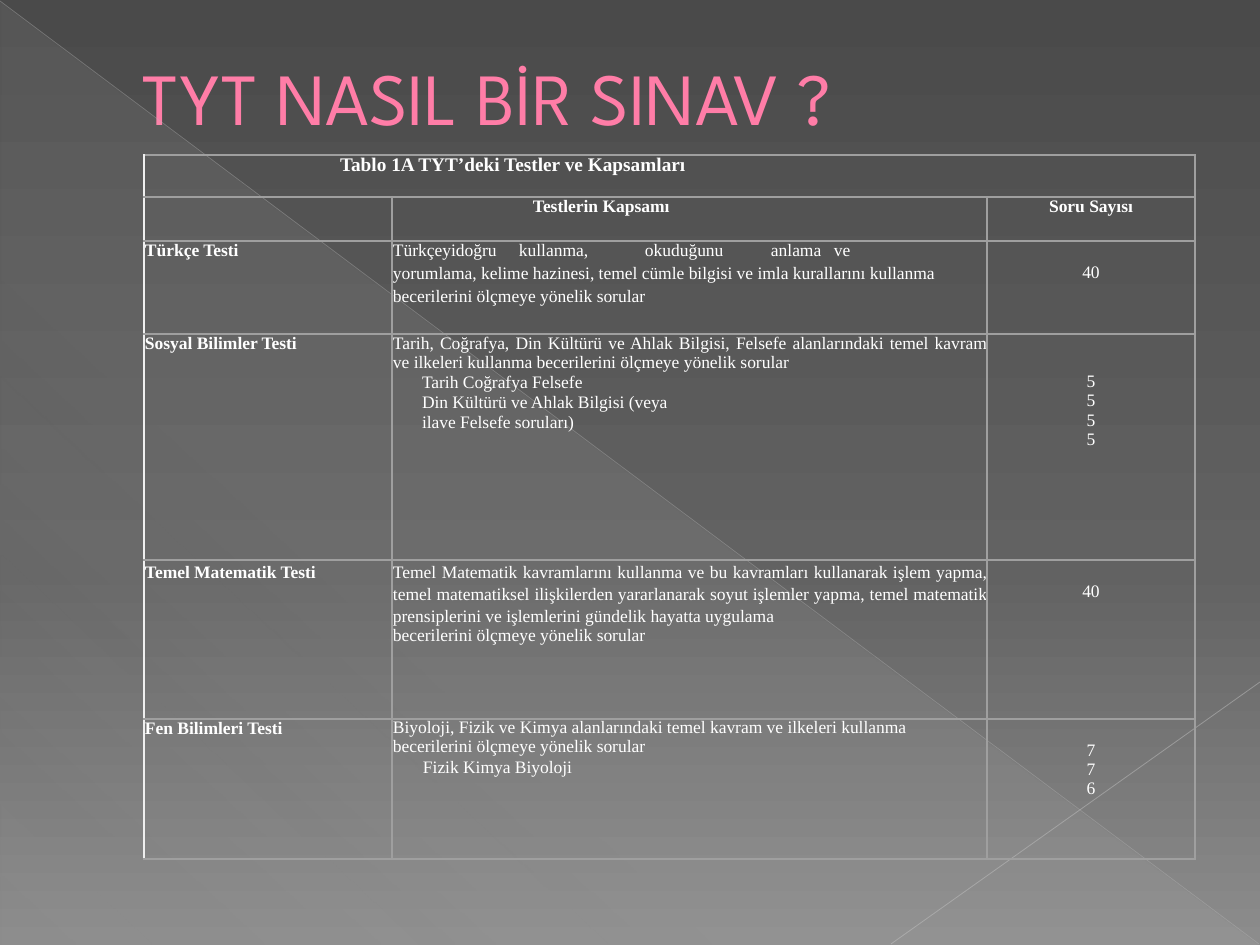
from lxml.etree import SubElement
from pptx import Presentation
from pptx.dml.color import RGBColor
from pptx.enum.shapes import MSO_CONNECTOR, MSO_SHAPE
from pptx.enum.text import MSO_ANCHOR, MSO_AUTO_SIZE, PP_ALIGN
from pptx.oxml.ns import qn
from pptx.util import Pt

EMU_PER_PX = 914400 / 126
SLIDE_BOX = (0, 0, 1260, 945)
TITLE_BOX = (63, 37, 1134, 118)
TABLE_ORIGIN = (144, 155)
COLUMN_WIDTHS = (248, 595, 208)
ROW_HEIGHTS = (42, 44, 93, 226, 159, 140)

WHITE = RGBColor(0xFF, 0xFF, 0xFF)
PINK = RGBColor(0xFF, 0x7D, 0xA7)
GRID = RGBColor(0x9F, 0x9F, 0x9F)
LEFT_EDGE = RGBColor(0xEF, 0xEF, 0xEF)
SHINE = RGBColor(0xD2, 0xD2, 0xD2)
LONG_DIAGONAL = RGBColor(0xBF, 0xBF, 0xBF)
SHORT_DIAGONAL = RGBColor(0xC6, 0xC6, 0xC6)
BACKGROUND_STOPS = (
    (0, RGBColor(0x4A, 0x4A, 0x4A), 100),
    (60, RGBColor(0x62, 0x62, 0x62), 100),
    (100, RGBColor(0x8C, 0x8C, 0x8C), 100),
)
SHINE_STOPS = ((0, SHINE, 10), (70, SHINE, 8), (100, SHINE, 1))

TITLE_FONT = {"name": "League Spartan", "size": Pt(42), "bold": False}
BODY_FONT = {"name": "Times New Roman", "size": Pt(10), "bold": False}
BOLD_FONT = {**BODY_FONT, "bold": True}
CAPTION_FONT = {**BOLD_FONT, "size": Pt(11)}

CENTER = {"alignment": PP_ALIGN.CENTER}
JUSTIFY = {"alignment": PP_ALIGN.JUSTIFY}
LOOSE = {"line_spacing": 1.15}
LIST_LINE = {"line_spacing": Pt(11.5)}


def px(length):
    return round(length * EMU_PER_PX)


def set_all(target, values):
    for name, value in values.items():
        setattr(target, name, value)


def line(text, spacing=None, font=BODY_FONT, left=0, right=0, tabs=()):
    """Describe one paragraph of a cell; indents and tabs are in px."""
    return {"text": text, "spacing": spacing or {}, "font": font,
            "left": left, "right": right, "tabs": tabs}


def cell(*lines, top=0):
    return {"lines": lines, "top": top}


def scores(*values, top):
    return cell(*(line(value, CENTER) for value in values), top=top)


ROWS = (
    (cell(line("Tablo 1A TYT’deki Testler ve Kapsamları",
               {"line_spacing": Pt(12.1)}, CAPTION_FONT, left=196)),
     cell(), cell()),
    (cell(),
     cell(line("Testlerin Kapsamı", font=BOLD_FONT, left=141)),
     cell(line("Soru Sayısı", CENTER, BOLD_FONT))),
    (cell(line("Türkçe Testi", font=BOLD_FONT, left=1)),
     cell(line("Türkçeyi\tdoğru\tkullanma,\tokuduğunu\tanlama\tve",
               {"line_spacing": Pt(11.2)}, left=1, tabs=(83, 144, 233, 331, 402)),
          line("yorumlama, kelime hazinesi, temel cümle bilgisi ve imla kurallarını "
               "kullanma becerilerini ölçmeye yönelik sorular",
               {"line_spacing": Pt(13)}, left=1)),
     scores("40", top=22)),
    (cell(line("Sosyal Bilimler Testi", font=BOLD_FONT, left=1)),
     cell(line("Tarih, Coğrafya, Din Kültürü ve Ahlak Bilgisi, Felsefe alanlarındaki "
               "temel kavram ve ilkeleri kullanma becerilerini ölçmeye yönelik sorular",
               JUSTIFY, left=1),
          line("Tarih Coğrafya Felsefe", left=30),
          line("Din Kültürü ve Ahlak Bilgisi (veya ilave Felsefe soruları)",
               LIST_LINE, left=30, right=297)),
     scores("5", "5", "5", "5", top=38)),
    (cell(line("Temel Matematik Testi", LOOSE, BOLD_FONT, left=1)),
     cell(line("Temel Matematik kavramlarını kullanma ve bu kavramları kullanarak işlem "
               "yapma, temel matematiksel ilişkilerden yararlanarak soyut işlemler yapma, "
               "temel matematik prensiplerini ve işlemlerini gündelik hayatta uygulama",
               {**JUSTIFY, **LOOSE}, left=1),
          line("becerilerini ölçmeye yönelik sorular", JUSTIFY, left=1)),
     scores("40", top=22)),
    (cell(line("Fen Bilimleri Testi", font=BOLD_FONT, left=1)),
     cell(line("Biyoloji, Fizik ve Kimya alanlarındaki temel kavram ve ilkeleri kullanma "
               "becerilerini ölçmeye yönelik sorular", {"line_spacing": 0.98}, left=1),
          line("Fizik Kimya Biyoloji", LIST_LINE, left=31)),
     scores("7", "7", "6", top=22)),
)


def paint_gradient(fill, element, stops, angle):
    fill.gradient()
    gradient = element.find(".//" + qn("a:gradFill"))
    for child in list(gradient):
        gradient.remove(child)
    stop_list = SubElement(gradient, qn("a:gsLst"))
    for position, color, opacity in stops:
        stop = SubElement(stop_list, qn("a:gs"), pos=str(position * 1000))
        value = SubElement(stop, qn("a:srgbClr"), val=str(color))
        SubElement(value, qn("a:alpha"), val=str(opacity * 1000))
    SubElement(gradient, qn("a:lin"), ang=str(angle * 60000), scaled="0")


def add_diagonal(slide, start, end, color, width, opacity):
    connector = slide.shapes.add_connector(
        MSO_CONNECTOR.STRAIGHT, *map(px, start + end))
    connector.line.width = Pt(width)
    connector.line.color.rgb = color
    properties = connector.element.spPr
    value = properties.find(".//" + qn("a:srgbClr"))
    SubElement(value, qn("a:alpha"), val=str(opacity * 1000))
    SubElement(properties, qn("a:effectLst"))


def add_backdrop(slide, box):
    left, top, width, height = box
    right, bottom = left + width, top + height
    paint_gradient(slide.background.fill, slide.element, BACKGROUND_STOPS, 90)
    triangle = slide.shapes.add_shape(
        MSO_SHAPE.RIGHT_TRIANGLE, *map(px, (left + 1, top + 2, width - 2, height - 2)))
    triangle.shadow.inherit = False
    triangle.line.fill.background()
    paint_gradient(triangle.fill, triangle.element, SHINE_STOPS, 133)
    add_diagonal(slide, (left, top + 1), (right - 1, bottom - 1), LONG_DIAGONAL, 0.39, 35)
    add_diagonal(slide, (right, top + 682), (left + 891, bottom - 1),
                 SHORT_DIAGONAL, 0.47, 45)


def write_paragraph(paragraph, text, spacing, font, left, right, tabs, color=WHITE):
    set_all(paragraph, {"space_before": Pt(0), **spacing})
    run = paragraph.add_run()
    run.text = text
    set_all(run.font, font)
    run.font.color.rgb = color
    properties = paragraph._p.get_or_add_pPr()
    for name, value in (("marL", left), ("marR", right), ("indent", 0)):
        properties.set(name, str(px(value)))
    if tabs:
        tab_list = SubElement(properties, qn("a:tabLst"))
        for position in tabs:
            SubElement(tab_list, qn("a:tab"), pos=str(px(position)), algn="l")


def add_title(slide, box):
    title = slide.shapes.title
    set_all(title, dict(zip(("left", "top", "width", "height"), map(px, box))))
    set_all(title.text_frame, {"vertical_anchor": MSO_ANCHOR.MIDDLE, "word_wrap": True,
                               "auto_size": MSO_AUTO_SIZE.NONE})
    content = line("TYT NASIL BİR SINAV ?", {"alignment": PP_ALIGN.LEFT}, TITLE_FONT, left=67)
    write_paragraph(title.text_frame.paragraphs[0], **content, color=PINK)


def set_borders(table_cell, borders):
    properties = table_cell._tc.get_or_add_tcPr()
    for index, (side, color, width) in enumerate(borders):
        border = SubElement(properties, qn("a:ln" + side), w=str(Pt(width)))
        fill = SubElement(border, qn("a:solidFill"))
        SubElement(fill, qn("a:srgbClr"), val=str(color))
        properties.insert(index, border)


def fill_cell(table_cell, lines, top):
    set_all(table_cell, {"margin_left": 0, "margin_right": 0,
                         "margin_top": px(top), "margin_bottom": 0})
    table_cell.fill.background()
    frame = table_cell.text_frame
    for index, content in enumerate(lines):
        paragraph = frame.add_paragraph() if index else frame.paragraphs[0]
        write_paragraph(paragraph, **content)


def add_test_table(slide, origin):
    frame = slide.shapes.add_table(
        len(ROWS), len(COLUMN_WIDTHS),
        *map(px, (*origin, sum(COLUMN_WIDTHS), sum(ROW_HEIGHTS))))
    table = frame.table
    set_all(table, {"first_row": False, "horz_banding": False})
    for column, width in zip(table.columns, COLUMN_WIDTHS):
        column.width = px(width)
    last_row = len(ROWS) - 1
    for row_index, (row, height) in enumerate(zip(ROWS, ROW_HEIGHTS)):
        table.rows[row_index].height = px(height)
        for column_index, content in enumerate(row):
            table_cell = table.cell(row_index, column_index)
            fill_cell(table_cell, **content)
            set_borders(table_cell, (
                ("L", GRID if column_index else LEFT_EDGE, 1.5),
                ("R", GRID, 1.5),
                ("T", GRID, 1.5 if row_index else 1),
                ("B", GRID, 1 if row_index == last_row else 1.5)))
    table.cell(0, 0).merge(table.cell(0, len(COLUMN_WIDTHS) - 1))


def main():
    presentation = Presentation()
    presentation.slide_width, presentation.slide_height = map(px, SLIDE_BOX[2:])
    slide = presentation.slides.add_slide(presentation.slide_layouts[5])
    add_backdrop(slide, SLIDE_BOX)
    add_title(slide, TITLE_BOX)
    add_test_table(slide, TABLE_ORIGIN)
    presentation.save("out.pptx")


if __name__ == "__main__":
    main()
